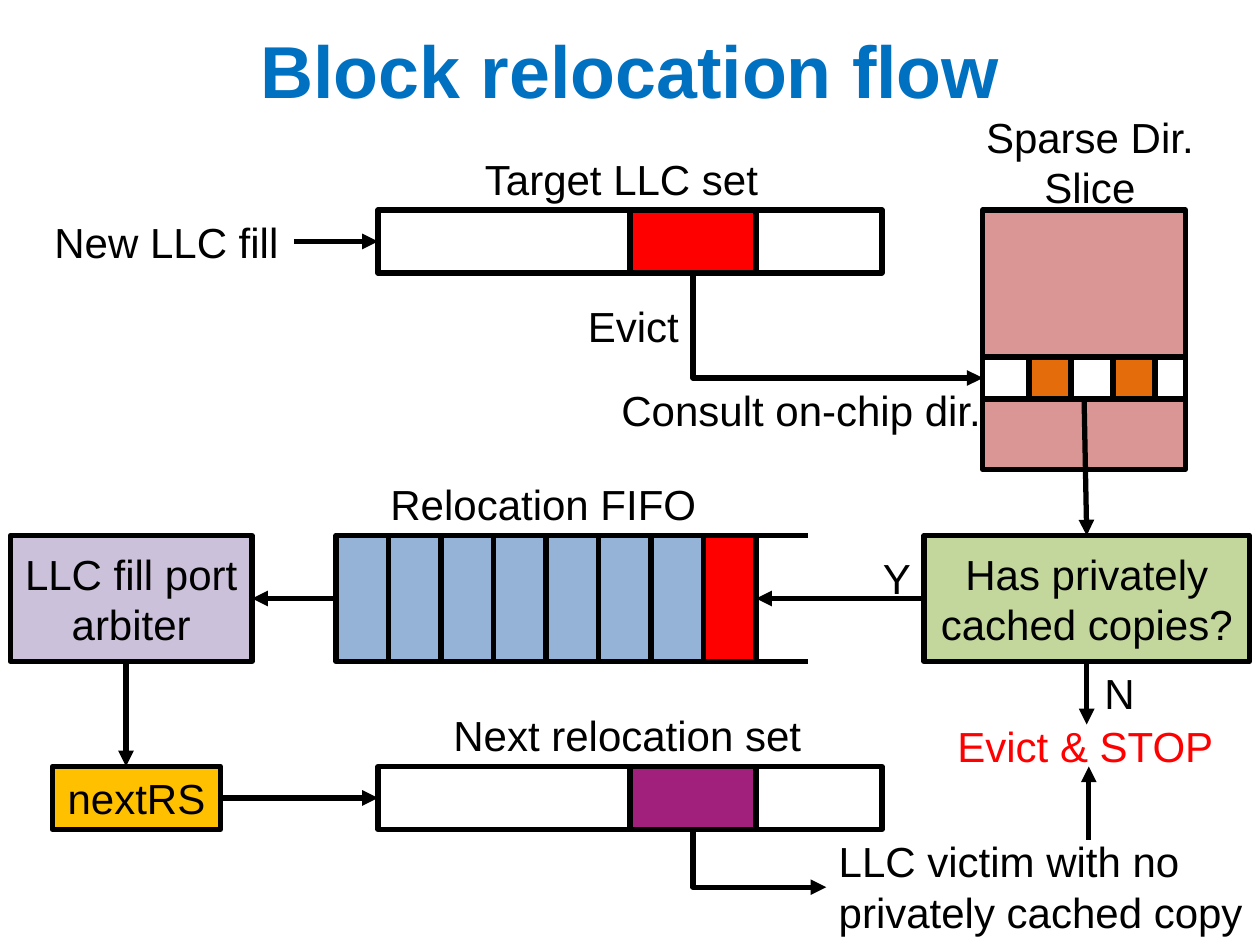
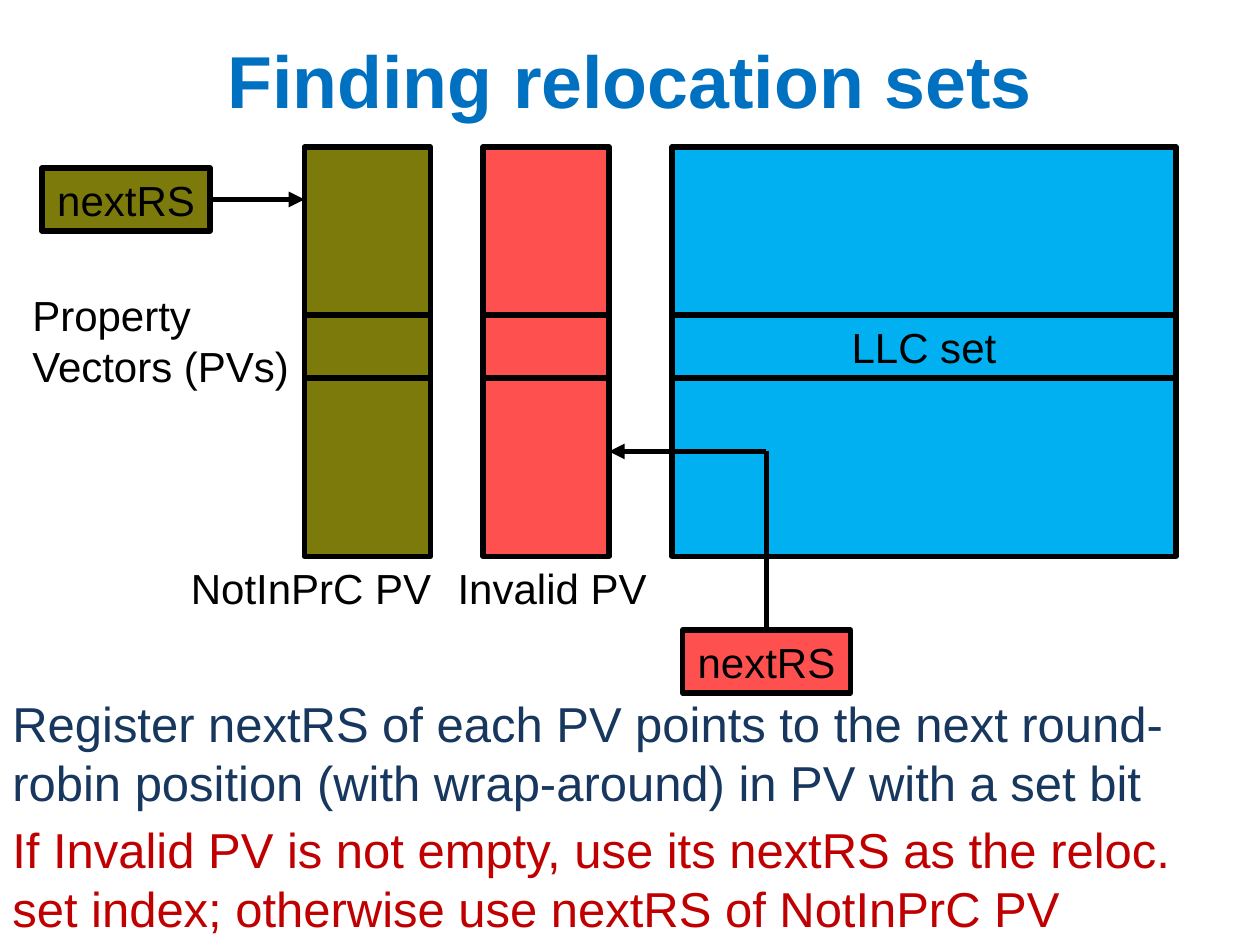
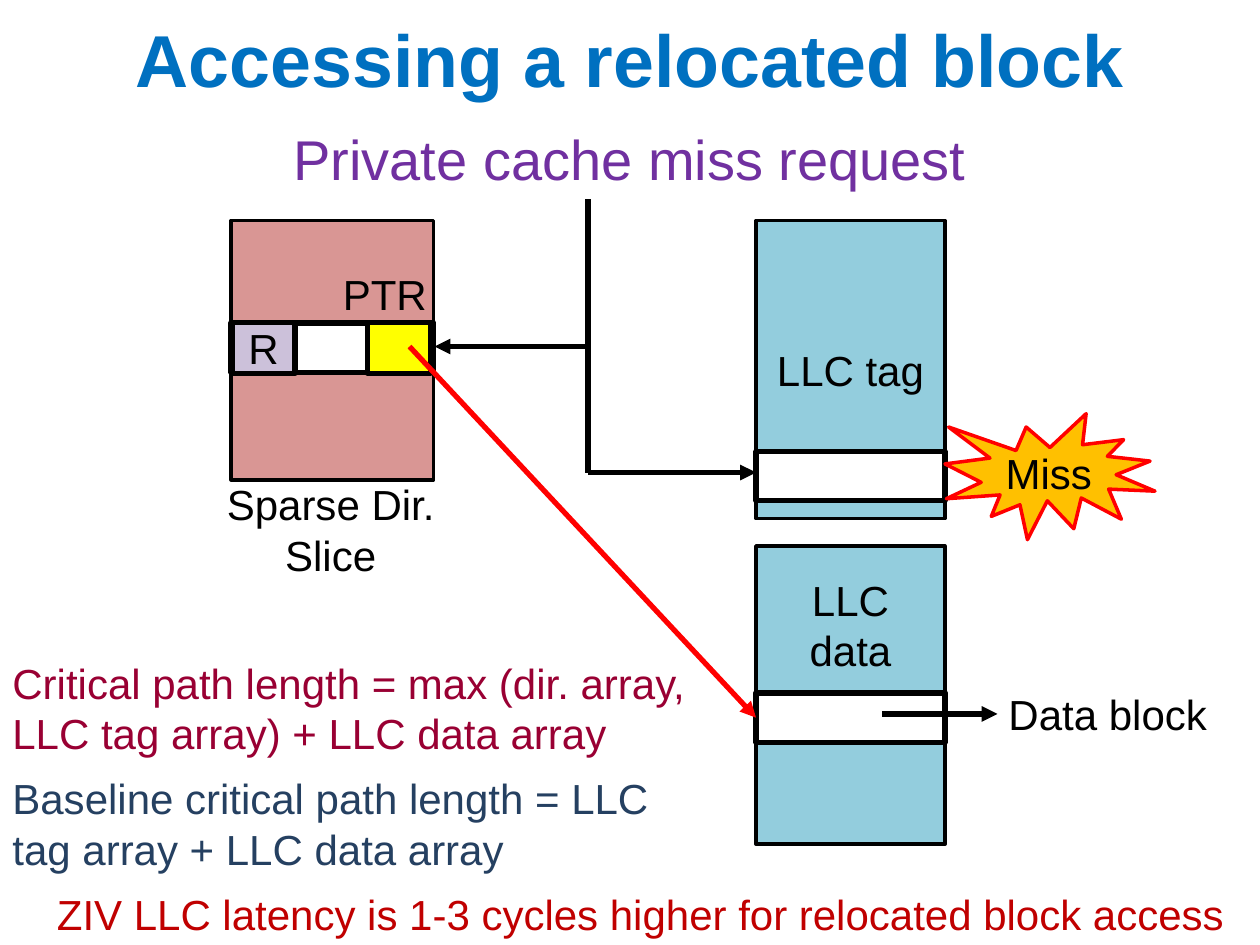
from dataclasses import dataclass

import pptx
import pptx.dml.color
import pptx.enum.shapes
import pptx.enum.text
import pptx.oxml.ns
import pptx.util
from lxml import etree

SHAPES = pptx.enum.shapes.MSO_SHAPE
CONNECTORS = pptx.enum.shapes.MSO_CONNECTOR
ALIGN = pptx.enum.text.PP_ALIGN
ANCHOR = pptx.enum.text.MSO_ANCHOR
FONT = "Arial"
BODY = 24
BLACK, WHITE, RED = "000000", "FFFFFF", "FF0000"
TITLE_BLUE, CRIMSON = "0070C0", "C00000"
ROSE, LAVENDER, AMBER = "D99694", "CCC1DA", "FFC000"
OLIVE, CORAL, SKY, AQUA = "7D7A0C", "FF5050", "00B0F0", "93CDDD"

# The slide is a grid of square cells, twelve to the inch
COLUMNS, ROWS = 120, 90


@dataclass
class Box:
    """A rectangle measured in grid cells."""
    left: float
    top: float
    width: float
    height: float

    def inside(self, column, row, width, height):
        return Box(self.left + column, self.top + row, width, height)

    def point(self, across, down):
        """A point at the given shares of the width and height."""
        return self.left + across * self.width, self.top + down * self.height


PAGE = Box(0, 0, COLUMNS, ROWS)


def cells(count):
    return pptx.util.Inches(count / 12)


def color(value):
    return pptx.dml.color.RGBColor.from_string(value)


def write(shape, text, size, ink, align, anchor, bold=False):
    frame = shape.text_frame
    frame.text = text
    frame.vertical_anchor = anchor
    for paragraph in frame.paragraphs:
        paragraph.alignment = align
        paragraph.font.name = FONT
        paragraph.font.size = pptx.util.Pt(size)
        paragraph.font.bold = bold
        paragraph.font.color.rgb = color(ink)


def add_label(slide, box, text, ink=BLACK, size=BODY, align=ALIGN.LEFT,
              wrap=False, anchor=ANCHOR.TOP, bold=False):
    shape = slide.shapes.add_textbox(*map(cells, (box.left, box.top, box.width, box.height)))
    shape.text_frame.word_wrap = wrap
    write(shape, text, size, ink, align, anchor, bold)


def add_title(slide, text, rows):
    add_label(slide, PAGE.inside(0, 0, COLUMNS, rows), text, TITLE_BLUE, 42,
              ALIGN.CENTER, True, ANCHOR.MIDDLE, True)


def add_block(slide, box, fill=None, text="", line=BLACK, weight=3,
              kind=SHAPES.RECTANGLE, anchor=ANCHOR.MIDDLE):
    shape = slide.shapes.add_shape(
        kind, *map(cells, (box.left, box.top, box.width, box.height)))
    shape.shadow.inherit = False
    if fill:
        shape.fill.solid()
        shape.fill.fore_color.rgb = color(fill)
    else:
        shape.fill.background()
    shape.line.color.rgb = color(line)
    shape.line.width = pptx.util.Pt(weight)
    if text:
        write(shape, text, BODY, BLACK, ALIGN.CENTER, anchor)
    return shape


def add_line(slide, start, end, ink=BLACK, arrow=True, kind=CONNECTORS.STRAIGHT):
    connector = slide.shapes.add_connector(kind, *map(cells, (*start, *end)))
    connector.line.color.rgb = color(ink)
    connector.line.width = pptx.util.Pt(3)
    if arrow:
        outline = connector.line._get_or_add_ln()
        etree.SubElement(outline, pptx.oxml.ns.qn("a:tailEnd"), type="triangle")
    etree.SubElement(connector._element.spPr, pptx.oxml.ns.qn("a:effectLst"))
    return connector


def add_elbow(slide, start, end):
    """An arrow that runs down, then right: a one-bend connector turned by 270 degrees."""
    width, height = end[0] - start[0], end[1] - start[1]
    left = (start[0] + end[0] - height) / 2
    top = (start[1] + end[1] - width) / 2
    connector = add_line(slide, (left, top), (left + height, top + width),
                         kind=CONNECTORS.ELBOW)
    properties = connector._element.spPr
    properties.xfrm.rot = 270
    properties.xfrm.flipH = True
    properties.find(pptx.oxml.ns.qn("a:prstGeom")).set("prst", "bentConnector2")


def add_directory(slide, box, entry_row, entry_rows, label_box, weight=3, wrap=False):
    """Sparse directory slice with one entry row; returns the entry's box."""
    entry = box.inside(0, entry_row, box.width, entry_rows)
    add_block(slide, box, ROSE, weight=weight)
    add_block(slide, entry, WHITE)
    add_label(slide, label_box, "Sparse Dir.\nSlice", align=ALIGN.CENTER, wrap=wrap)
    return entry


# Block relocation flow
def add_cache_set(slide, box, fill, label, label_column, label_width):
    """Cache set with one marked way; returns the way's box."""
    way = box.inside(box.width / 2, 0, box.width / 4, box.height)
    add_block(slide, box)
    add_block(slide, way, fill)
    add_label(slide, box.inside(label_column, -6, label_width, 6), label)
    return way


def add_fifo(slide, box, slots=8):
    slot = box.width / slots
    for index in reversed(range(slots)):
        fill = RED if index == slots - 1 else "95B3D7"
        add_block(slide, box.inside(index * slot, 0, slot, box.height), fill)
    for down in (0, 1):
        column, row = box.point(1, down)
        add_line(slide, (column, row), (column + slot, row), arrow=False)
    add_label(slide, box.inside(4, -6, 31.8, 6), "Relocation FIFO")


def build_flow(slide):
    add_title(slide, "Block relocation flow", 13.2)

    # Fill of the target set and the directory lookup
    target = PAGE.inside(36, 20, 48, 6)
    victim = add_cache_set(slide, target, RED, "Target LLC set", 9, 28.7)
    add_label(slide, PAGE.inside(4, 20, 24, 6), "New LLC fill")
    add_line(slide, (28, 23), target.point(0, 0.5))
    entry = add_directory(slide, PAGE.inside(93.6, 20, 19.3, 24.7), 14, 4,
                          PAGE.inside(92.6, 10, 22.4, 11))
    for column in (4.4, 12.4):
        add_block(slide, entry.inside(column, 0, 4, 4), "E46C0A")
    add_elbow(slide, victim.point(0.5, 1), entry.point(0, 0.5))
    add_label(slide, PAGE.inside(54.8, 28, 11.2, 6), "Evict")
    add_label(slide, PAGE.inside(58, 36, 37, 6), "Consult on-chip dir.")

    # Decision, queue and arbiter in one row
    decision = PAGE.inside(88, 51, 31, 12)
    fifo = PAGE.inside(32, 51, 40, 12)
    arbiter = PAGE.inside(1, 51, 23, 12)
    add_block(slide, decision, "C3D69B", "Has privately cached copies?")
    add_fifo(slide, fifo)
    add_block(slide, arbiter, LAVENDER, "LLC fill port\narbiter")
    add_line(slide, entry.point(0.5, 1), decision.point(0.5, 0))
    add_line(slide, decision.point(0, 0.5), fifo.point(1, 0.5))
    add_line(slide, fifo.point(0, 0.5), arbiter.point(1, 0.5))
    add_label(slide, PAGE.inside(82.9, 52, 5.2, 6), "Y")
    add_line(slide, decision.point(0.5, 1), (103.5, 69))
    add_label(slide, PAGE.inside(104, 63, 11, 6), "N", wrap=True)
    add_label(slide, PAGE.inside(90, 68, 27, 6), "Evict & STOP", RED)

    # Next relocation set and its victim
    register = PAGE.inside(5, 73, 16, 6)
    relocation = PAGE.inside(36, 73, 48, 6)
    add_block(slide, register, AMBER, "nextRS")
    moved = add_cache_set(slide, relocation, "A0207B", "Next relocation set", 6, 35.9)
    add_line(slide, (12, 63), (12, 73))
    add_line(slide, register.point(1, 0.5), relocation.point(0, 0.5))
    add_elbow(slide, moved.point(0.5, 1), (78.7, 84.5))
    add_label(slide, PAGE.inside(78.7, 79, 41.3, 11),
              "LLC victim with no\nprivately cached copy")
    add_line(slide, (103.7, 80), (103.7, 73))


# Finding relocation sets
def add_vector(slide, box, fill, text=""):
    add_block(slide, box, fill)
    add_block(slide, box.inside(0, 16, box.width, 6), fill, text)


def build_sets(slide):
    add_title(slide, "Finding relocation sets", 15)

    # Cache and property vectors
    not_private = PAGE.inside(29, 14, 12, 39)
    invalid = PAGE.inside(46, 14, 12, 39)
    add_vector(slide, PAGE.inside(64, 14, 48, 39), SKY, "LLC set")
    add_vector(slide, invalid, CORAL)
    add_vector(slide, not_private, OLIVE)
    add_label(slide, not_private.inside(-12, 39, 25.6, 6), "NotInPrC PV")
    add_label(slide, invalid.inside(-3.6, 39, 20.6, 6), "Invalid PV")
    add_label(slide, PAGE.inside(1.9, 27, 27.1, 11), "Property\nVectors (PVs)")

    # Registers that point into the vectors
    first = PAGE.inside(4, 16, 16, 6)
    second = PAGE.inside(65, 60, 16, 6)
    add_block(slide, first, OLIVE, "nextRS")
    add_line(slide, first.point(1, 0.5), (29, 19))
    add_block(slide, second, CORAL, "nextRS")
    corner = (73, 43)
    add_line(slide, second.point(0.5, 0), corner, arrow=False)
    add_line(slide, corner, (58, 43))

    # Rules
    rules = (
        ("Register nextRS of each PV points to the next round-robin position "
         "(with wrap-around) in PV with a set bit", "17375E"),
        ("If Invalid PV is not empty, use its nextRS as the reloc. set index; "
         "otherwise use nextRS of NotInPrC PV", CRIMSON),
    )
    for index, (text, ink) in enumerate(rules):
        add_label(slide, PAGE.inside(0, 65.5 + 12 * index, COLUMNS, 12.5), text, ink, 28,
                  wrap=True)


# Accessing a relocated block
def add_array(slide, box, row, text, anchor=ANCHOR.MIDDLE):
    """Cache array with one entry; returns the entry's box."""
    entry = box.inside(0, row, box.width, 4.7)
    shape = add_block(slide, box, AQUA, text, weight=2, anchor=anchor)
    if anchor == ANCHOR.TOP:
        shape.text_frame.margin_top = cells(2.7)
    add_block(slide, entry, WHITE)
    return entry


def build_access(slide):
    add_title(slide, "Accessing a relocated block", 11)
    add_label(slide, PAGE.inside(0, 11.3, COLUMNS, 7.7), "Private cache miss request",
              "7030A0", 32, ALIGN.CENTER, True)

    # Directory and cache arrays
    entry = add_directory(slide, PAGE.inside(22, 21, 19.3, 24.7), 9.75, 4.7,
                          PAGE.inside(20, 45, 23, 11), 2, True)
    add_block(slide, entry.inside(0.1, 0, 6, 4.8), LAVENDER, "R")
    add_block(slide, entry.inside(13, 0, 6, 4.8), "FFFF00")
    tag = add_array(slide, PAGE.inside(72, 21, 18, 28.4), 22, "LLC tag")
    data = add_array(slide, PAGE.inside(72, 52, 18, 28.4), 14, "LLC data", ANCHOR.TOP)
    add_block(slide, PAGE.inside(90, 39.4, 20, 12), AMBER, "Miss", RED, 2,
              SHAPES.EXPLOSION1)
    add_label(slide, PAGE.inside(31.3, 25, 10.7, 6), "PTR", align=ALIGN.CENTER, wrap=True)

    # Request, pointer and data lines
    fork, bend = (56, 33), (56, 45)
    add_line(slide, (56, 19), bend, arrow=False)
    add_line(slide, fork, (41.4, 33))
    add_line(slide, bend, (tag.left, 45))
    add_line(slide, (39, 33), data.point(0, 0.5), RED)
    add_line(slide, (84, 68), (95, 68))
    add_label(slide, PAGE.inside(94, 65, 23, 6), "Data block", align=ALIGN.CENTER, wrap=True)

    # Latency notes
    notes = (
        ("Critical path length = max (dir. array, LLC tag array) + LLC data array", "990033"),
        ("Baseline critical path length = LLC tag array + LLC data array", "254061"),
    )
    for index, (text, ink) in enumerate(notes):
        add_label(slide, PAGE.inside(0, 62 + 11 * index, 68, 11), text, ink, wrap=True)
    add_label(slide, PAGE.inside(2, 84, 118, 6),
              "ZIV LLC latency is 1-3 cycles higher for relocated block access",
              CRIMSON, align=ALIGN.CENTER, wrap=True)


def main():
    presentation = pptx.Presentation()
    presentation.slide_width = cells(COLUMNS)
    presentation.slide_height = cells(ROWS)
    for build in (build_flow, build_sets, build_access):
        build(presentation.slides.add_slide(presentation.slide_layouts[6]))
    presentation.save("out.pptx")


if __name__ == "__main__":
    main()
